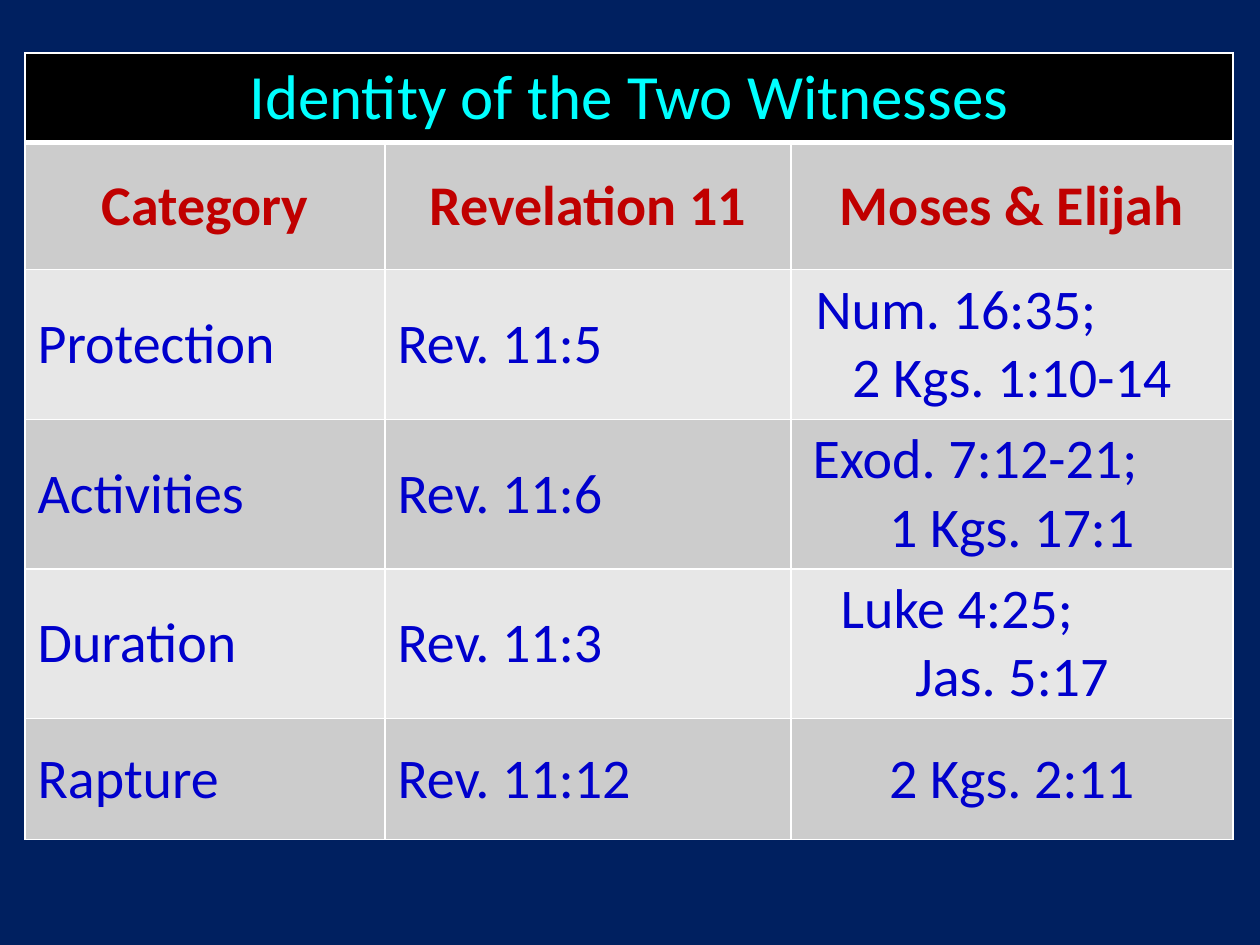
from dataclasses import dataclass
from lxml.etree import SubElement
from pptx import Presentation
from pptx.dml.color import RGBColor
from pptx.enum.text import MSO_ANCHOR, PP_ALIGN
from pptx.oxml.ns import qn
from pptx.util import Emu, Pt

EMU_PER_PX = 914400 / 126


@dataclass(frozen=True)
class Theme:
    font: str = "Calibri"
    title_size: int = 36
    body_size: int = 32
    background: str = "002060"
    title_fill: str = "000000"
    title_text: str = "00FFFF"
    heading_text: str = "C00000"
    body_text: str = "0000CC"
    bands: tuple = ("E7E7E7", "CCCCCC")
    border: str = "FFFFFF"


theme = Theme()


def px(length):
    return Emu(round(length * EMU_PER_PX))


def write_line(para, text, *, size=theme.body_size, color=theme.body_text,
               bold=False, align=PP_ALIGN.LEFT, indent=0):
    para.alignment = align
    if indent:
        properties = para._p.get_or_add_pPr()
        properties.set("marL", str(px(indent)))
        properties.set("indent", "0")
    span = para.add_run()
    span.text = text
    span.font.name = theme.font
    span.font.size = Pt(size)
    span.font.bold = bold
    span.font.color.rgb = RGBColor.from_string(color)


title = "Identity of the Two Witnesses"
headings = ["Category", "Revelation 11", "Moses & Elijah"]
witnesses = [
    ("Protection", "Rev. 11:5", ["Num. 16:35;", "2 Kgs. 1:10-14"], 12),
    ("Activities", "Rev. 11:6", ["Exod. 7:12-21;", "1 Kgs. 17:1"], 9),
    ("Duration", "Rev. 11:3", ["Luke 4:25;", "Jas. 5:17"], 37),
    ("Rapture", "Rev. 11:12", ["2 Kgs. 2:11"], 0),
]
column_widths = [360, 406, 442]
row_heights = [89, 127, 149, 149, 149, 121]

deck = Presentation()
deck.slide_width, deck.slide_height = px(1260), px(945)
page = deck.slides.add_slide(deck.slide_layouts[6])
page.background.fill.solid()
page.background.fill.fore_color.rgb = RGBColor.from_string(theme.background)

frame = page.shapes.add_table(len(row_heights), len(column_widths), px(25), px(53),
                              px(sum(column_widths)), px(sum(row_heights)))
table = frame.table
table.first_row = False
table.horz_banding = False
for column, width in zip(table.columns, column_widths):
    column.width = px(width)
for row, height in zip(table.rows, row_heights):
    row.height = px(height)

for row_index, row in enumerate(table.rows):
    for cell in row.cells:
        properties = cell._tc.get_or_add_tcPr()
        for side in ("L", "R", "T", "B"):
            under_title = (row_index, side) in [(0, "B"), (1, "T")]
            line = SubElement(properties, qn(f"a:ln{side}"), w=str(Pt(3 if under_title else 1)))
            paint = SubElement(line, qn("a:solidFill"))
            SubElement(paint, qn("a:srgbClr"), val=theme.border)
        cell.fill.solid()
        fill = theme.bands[row_index % 2] if row_index else theme.title_fill
        cell.fill.fore_color.rgb = RGBColor.from_string(fill)
        cell.vertical_anchor = MSO_ANCHOR.MIDDLE

table.cell(0, 0).merge(table.cell(0, len(column_widths) - 1))
write_line(table.cell(0, 0).text_frame.paragraphs[0], title, size=theme.title_size,
           color=theme.title_text, align=PP_ALIGN.CENTER)

for column_index, heading in enumerate(headings):
    write_line(table.cell(1, column_index).text_frame.paragraphs[0], heading,
               color=theme.heading_text, bold=True, align=PP_ALIGN.CENTER)

for row_index, (category, revelation, references, indent) in enumerate(witnesses, start=2):
    write_line(table.cell(row_index, 0).text_frame.paragraphs[0], category)
    write_line(table.cell(row_index, 1).text_frame.paragraphs[0], revelation)
    box = table.cell(row_index, 2).text_frame
    for first_reference in references[:-1]:
        write_line(box.paragraphs[0], first_reference, indent=indent)
        box.add_paragraph()
    write_line(box.paragraphs[-1], references[-1], align=PP_ALIGN.CENTER)

deck.save("out.pptx")
